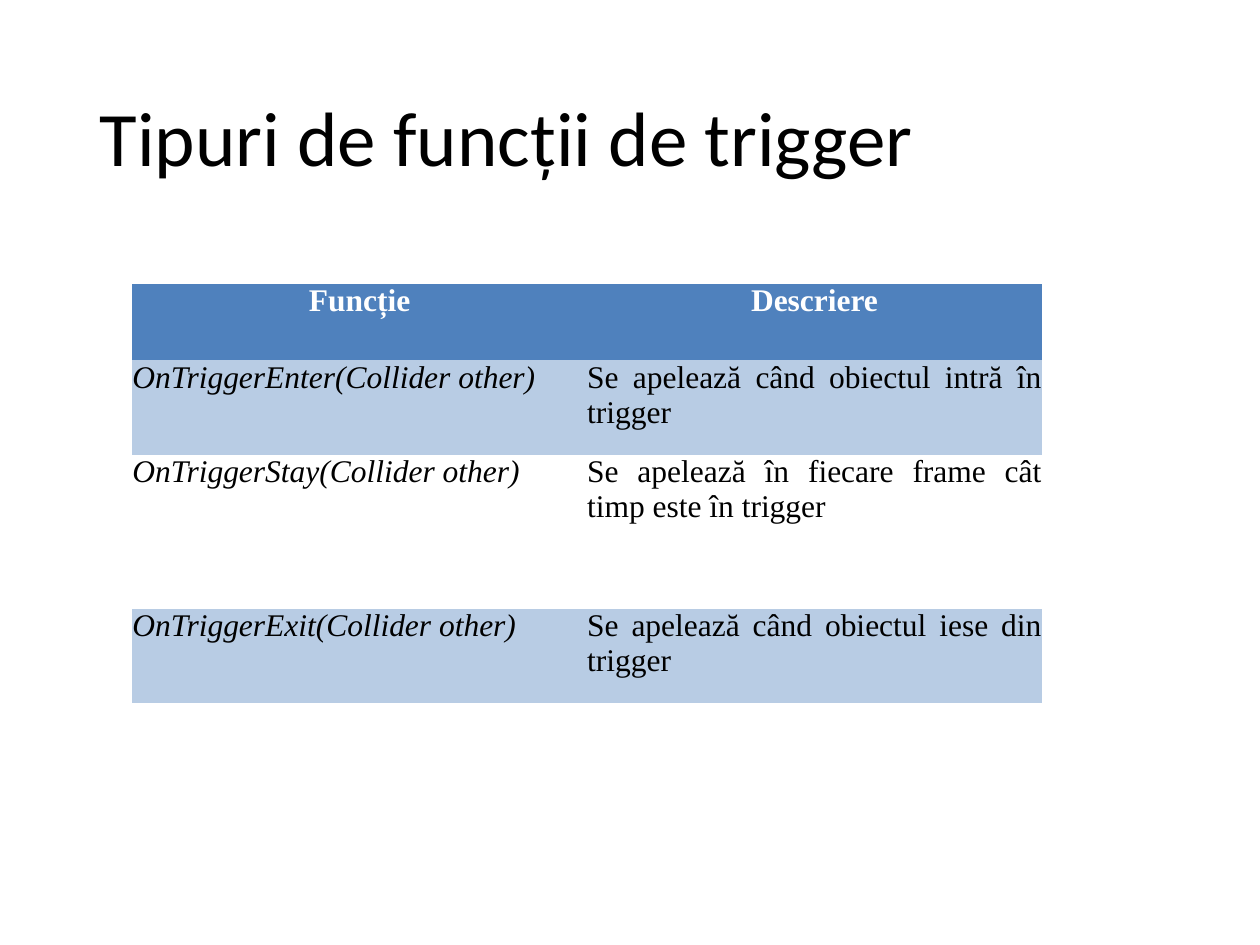
from typing import NamedTuple

from pptx import Presentation
from pptx.dml.color import RGBColor
from pptx.enum import text as t
from pptx.util import Inches, Pt

HEAD, BAND, WHITE, BLACK = "4F81BD", "B8CCE4", "FFFFFF", "000000"
NO_GRID = "{2D5ABB26-0587-4C30-8999-92F81FD0307C}"


class Row(NamedTuple):
    name: str
    note: str
    height: float
    fill: str


ROWS = [
    Row("Funcție", "Descriere", 0.61, HEAD),
    Row("OnTriggerEnter(Collider other)",
        "Se apelează când obiectul intră în trigger", 0.75, BAND),
    Row("OnTriggerStay(Collider other)",
        "Se apelează în fiecare frame cât timp este în trigger", 1.22, WHITE),
    Row("OnTriggerExit(Collider other)",
        "Se apelează când obiectul iese din trigger", 0.75, BAND),
]


def color(code: str) -> RGBColor:
    return RGBColor.from_string(code)


def write(frame, words: str, *, font="Times New Roman", size=18, ink=BLACK,
          bold=False, italic=False, align=None, space=None) -> None:
    para = frame.paragraphs[0]
    para.alignment = align
    para.line_spacing = space
    run = para.add_run()
    run.text = words
    face = run.font
    face.name, face.size = font, Pt(size)
    face.bold, face.italic = bold, italic
    face.color.rgb = color(ink)


def add_title(slide, words: str) -> None:
    title = slide.shapes.title
    title.left, title.top = Inches(0.69), Inches(0.4)
    title.width, title.height = Inches(8.62), Inches(1.45)
    title.text_frame.vertical_anchor = t.MSO_ANCHOR.MIDDLE
    write(title.text_frame, words, font="Calibri", size=44,
          align=t.PP_ALIGN.LEFT, space=0.9)


def fill_cell(cell, words: str, row: Row, italic: bool) -> None:
    cell.margin_left = cell.margin_right = 0
    cell.margin_top = cell.margin_bottom = 0
    cell.fill.solid()
    cell.fill.fore_color.rgb = color(row.fill)
    head = row.fill == HEAD
    write(cell.text_frame, words, ink=WHITE if head else BLACK,
          bold=head, italic=italic and not head,
          align=t.PP_ALIGN.CENTER if head else t.PP_ALIGN.JUSTIFY)


def add_grid(slide, rows: list[Row]) -> None:
    high = sum(row.height for row in rows)
    frame = slide.shapes.add_table(len(rows), 2, Inches(1.05), Inches(2.25),
                                   Inches(7.22), Inches(high))
    grid = frame.table
    grid._tbl.tblPr.find("{*}tableStyleId").text = NO_GRID
    for i, row in enumerate(rows):
        grid.rows[i].height = Inches(row.height)
        fill_cell(grid.cell(i, 0), row.name, row, italic=True)
        fill_cell(grid.cell(i, 1), row.note, row, italic=False)


def main() -> None:
    deck = Presentation()
    deck.slide_width, deck.slide_height = Inches(10), Inches(7.5)
    slide = deck.slides.add_slide(deck.slide_layouts[5])
    add_title(slide, "Tipuri de funcții de trigger")
    add_grid(slide, ROWS)
    deck.save("out.pptx")


if __name__ == "__main__":
    main()
